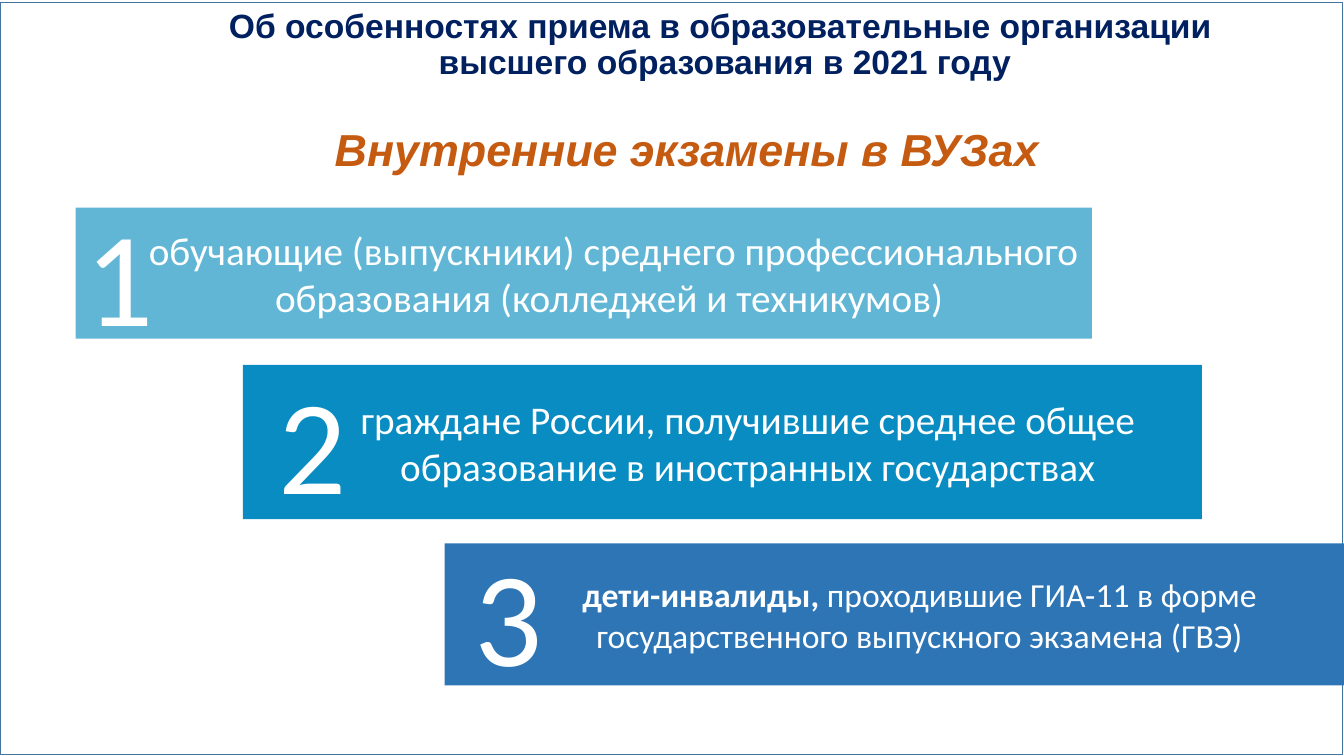
from dataclasses import dataclass

from pptx import Presentation
from pptx import util as u
from pptx.dml.color import RGBColor
from pptx.enum import shapes, text


@dataclass
class Bar:
    box: tuple[float, float, float, float]
    fill: str
    size: int
    bold: str
    words: str
    num: tuple[float, float]


BARS = [
    Bar((0.75, 2.06, 10.08, 1.3), "61B6D6", 28, "",
        " обучающие (выпускники) среднего профессионального "
        "образования (колледжей и техникумов)", (0.75, 1.86)),
    Bar((2.41, 3.62, 9.51, 1.53), "098CC1", 28, "",
        "граждане России, получившие среднее общее "
        "образование в иностранных государствах", (2.66, 3.52)),
    Bar((4.41, 5.39, 8.92, 1.41), "2E75B6", 24, "дети-инвалиды,",
        " проходившие ГИА-11 в форме государственного "
        "выпускного экзамена (ГВЭ)", (4.61, 5.23)),
]


def paint(part, tone: str) -> None:
    part.rgb = RGBColor.from_string(tone)


def style(para, face: str, size: int, tone: str, bold=False, slant=False) -> None:
    font = para.font
    font.name, font.size = face, u.Pt(size)
    font.bold, font.italic = bold, slant
    paint(font.color, tone)


def add_rect(slide, box: tuple[float, float, float, float]):
    rect = slide.shapes.add_shape(shapes.MSO_SHAPE.RECTANGLE, *map(u.Inches, box))
    rect.shadow.inherit = False
    return rect


def add_frame(slide) -> None:
    frame = add_rect(slide, (0, 0.02, 13.31, 7.46))
    frame.fill.background()
    paint(frame.line.color, "43739E")
    frame.line.width = u.Pt(0.25)


def add_title(slide) -> None:
    title = slide.shapes.title
    title.left, title.top = u.Inches(1.31), u.Inches(0)
    title.width, title.height = u.Inches(11.76), u.Inches(0.91)
    body = title.text_frame
    body.auto_size = text.MSO_AUTO_SIZE.NONE
    body.vertical_anchor = text.MSO_ANCHOR.MIDDLE
    body.margin_left = body.margin_right = u.Inches(0.04)
    body.margin_top = body.margin_bottom = u.Inches(0.04)
    para = body.paragraphs[0]
    para.text = ("Об особенностях приема в образовательные организации \v"
                 "высшего образования в 2021 году")
    para.alignment = text.PP_ALIGN.CENTER
    para.line_spacing = 0.9
    style(para, "Arial", 24, "002060", bold=True)


def add_label(slide, box: tuple[float, float, float, float], words: str, wrap: bool):
    label = slide.shapes.add_textbox(*map(u.Inches, box))
    body = label.text_frame
    body.word_wrap = wrap
    body.auto_size = text.MSO_AUTO_SIZE.SHAPE_TO_FIT_TEXT
    para = body.paragraphs[0]
    para.text = words
    return para


def add_bar(slide, bar: Bar) -> None:
    rect = add_rect(slide, bar.box)
    rect.fill.solid()
    paint(rect.fill.fore_color, bar.fill)
    rect.line.fill.background()
    body = rect.text_frame
    body.word_wrap = True
    body.vertical_anchor = text.MSO_ANCHOR.MIDDLE
    para = body.paragraphs[0]
    para.level = 1
    para.alignment = text.PP_ALIGN.CENTER
    props = para._p.get_or_add_pPr()
    props.set("marL", str(u.Inches(0.5)))
    props.set("indent", "0")
    style(para, "Calibri", bar.size, "FFFFFF")
    if bar.bold:
        run = para.add_run()
        run.text = bar.bold
        run.font.bold = True
    para.add_run().text = bar.words


def main() -> None:
    deck = Presentation()
    deck.slide_width, deck.slide_height = u.Inches(13.33), u.Inches(7.5)
    slide = deck.slides.add_slide(deck.slide_layouts[5])
    add_frame(slide)
    add_title(slide)
    head = add_label(slide, (1.4, 1.16, 10.83, 0.64),
                     "Внутренние экзамены в ВУЗах", True)
    head.alignment = text.PP_ALIGN.CENTER
    style(head, "Arial", 32, "C55A11", bold=True, slant=True)
    for bar in BARS:
        add_bar(slide, bar)
    for rank, bar in enumerate(BARS, 1):
        para = add_label(slide, (*bar.num, 0.88, 1.72), str(rank), False)
        style(para, "Calibri", 96, "FFFFFF")
    deck.save("out.pptx")


if __name__ == "__main__":
    main()
